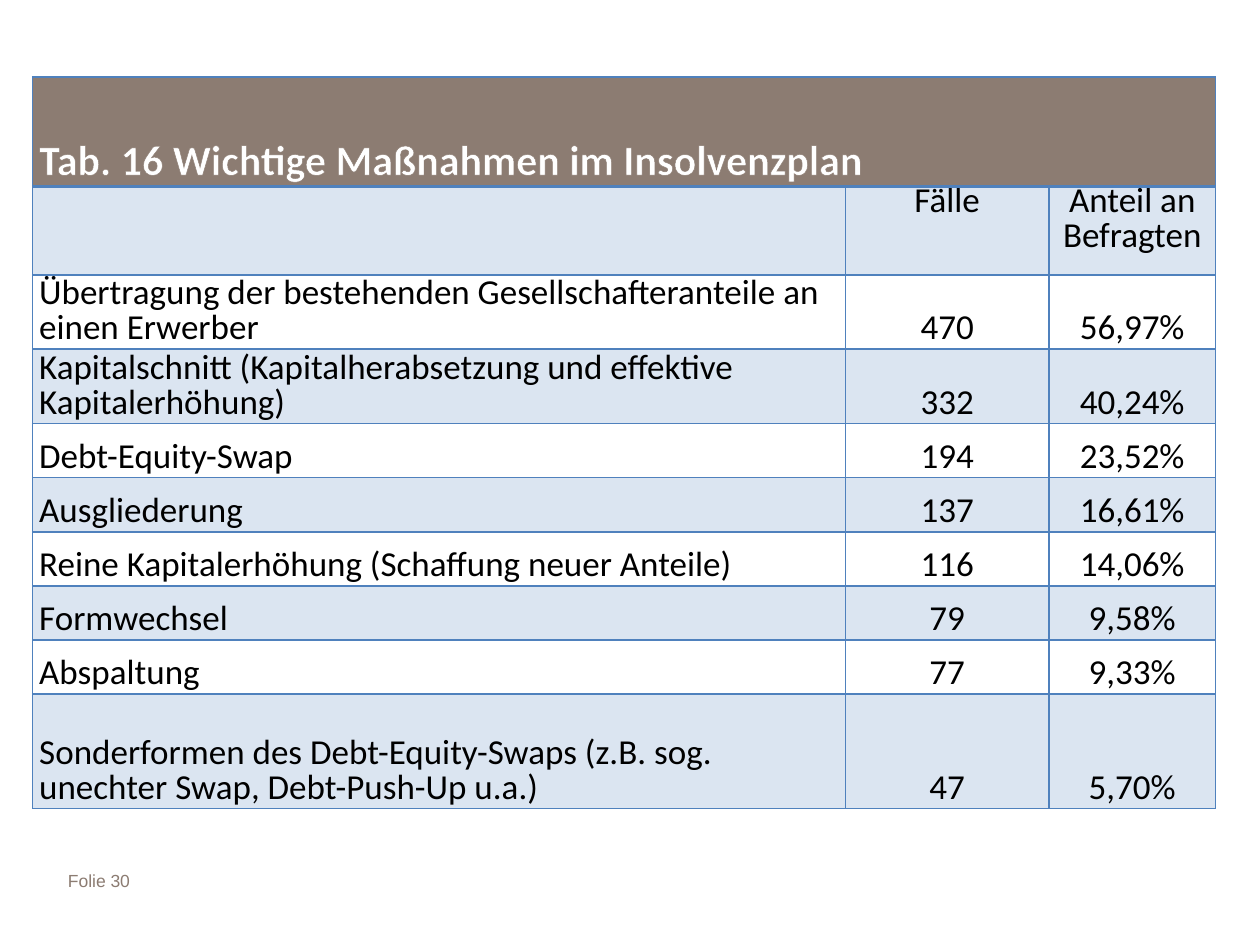
from lxml import etree
from pptx import Presentation
from pptx.dml.color import RGBColor
from pptx.enum.text import MSO_ANCHOR, PP_ALIGN
from pptx.oxml.ns import qn
from pptx.util import Cm, Pt

TOP, BOTTOM = MSO_ANCHOR.TOP, MSO_ANCHOR.BOTTOM
LEFT, CENTER, JUSTIFY = PP_ALIGN.LEFT, PP_ALIGN.CENTER, PP_ALIGN.JUSTIFY
BROWN, BLUE, WHITE, BLACK = "8C7C72", "4F81BD", "FFFFFF", "000000"


def color(value):
    return RGBColor.from_string(value)


def make_line(tag, value, points):
    line = etree.Element(qn(tag), w=str(int(Pt(points))))
    fill = etree.SubElement(line, qn("a:solidFill"))
    etree.SubElement(fill, qn("a:srgbClr"), val=value)
    return line


title = "Tab. 16 Wichtige Maßnahmen im Insolvenzplan"
rows = [
    (title, "", ""),
    ("", "Fälle", "Anteil an Befragten"),
    ("Übertragung der bestehenden Gesellschafteranteile an einen Erwerber", "470", "56,97%"),
    ("Kapitalschnitt (Kapitalherabsetzung und effektive Kapitalerhöhung)", "332", "40,24%"),
    ("Debt-Equity-Swap", "194", "23,52%"),
    ("Ausgliederung", "137", "16,61%"),
    ("Reine Kapitalerhöhung (Schaffung neuer Anteile)", "116", "14,06%"),
    ("Formwechsel", "79", "9,58%"),
    ("Abspaltung", "77", "9,33%"),
    ("Sonderformen des Debt-Equity-Swaps (z.B. sog. unechter Swap, Debt-Push-Up u.a.)",
     "47", "5,70%"),
]
widths = [16.38, 4.11, 3.35]
heights = [2.21, 1.78, 1.5, 1.5] + [1.09] * 5 + [2.31]

deck = Presentation()
deck.slide_width, deck.slide_height = Cm(25.4), Cm(19.05)
page = deck.slides.add_slide(deck.slide_layouts[6])

# Slide number
box = page.shapes.add_textbox(Cm(1.12), Cm(17.42), Cm(6.32), Cm(0.91))
box.text_frame.word_wrap = True
box.text_frame.text = "Folie 30"
font = box.text_frame.paragraphs[0].runs[0].font
font.name, font.size = "Arial", Pt(10)
font.color.rgb = color(BROWN)

# Table grid
table = page.shapes.add_table(len(rows), len(widths), Cm(0.66), Cm(1.55),
                              Cm(sum(widths)), Cm(sum(heights))).table
table.first_row = table.horz_banding = False
for column, width in zip(table.columns, widths):
    column.width = Cm(width)
for row, height in zip(table.rows, heights):
    row.height = Cm(height)
table.cell(0, 0).merge(table.cell(0, 2))

# Cells
for r, texts in enumerate(rows):
    for c, text in enumerate(texts):
        cell = table.cell(r, c)
        cell.margin_left = cell.margin_right = Cm(0.13)
        cell.margin_top = cell.margin_bottom = 0
        cell.vertical_anchor = TOP if r == 1 else BOTTOM

        # Borders come before the fill; the edge below the title is heavier
        properties = cell._tc.get_or_add_tcPr()
        for side in "LRTB":
            below_title = (r, side) in [(0, "B"), (1, "T")]
            properties.append(make_line(f"a:ln{side}", BLUE, 2 if below_title else 1))
        if r == 0:
            cell.fill.solid()
            cell.fill.fore_color.rgb = color(BROWN)
        elif r % 2:
            cell.fill.solid()
            cell.fill.fore_color.rgb = color(BLUE)
            shade = properties.find(qn("a:solidFill")).find(qn("a:srgbClr"))
            etree.SubElement(shade, qn("a:alpha"), val="20000")
        else:
            cell.fill.background()

        if not text:
            continue
        cell.text_frame.text = text
        para = cell.text_frame.paragraphs[0]
        para.alignment = JUSTIFY if r == 0 else CENTER if c else LEFT
        para.line_spacing = 1.5 if r == 0 else Pt(20)
        span = para.runs[0]
        span.font.name = "Calibri"
        span.font.size = Pt(24 if r == 0 else 20)
        span.font.bold = r == 0
        span.font.color.rgb = color(WHITE if r == 0 else BLACK)
        if r == 0:
            span.font._element.insert(0, make_line("a:ln", BROWN, 0.75))

deck.save("out.pptx")
